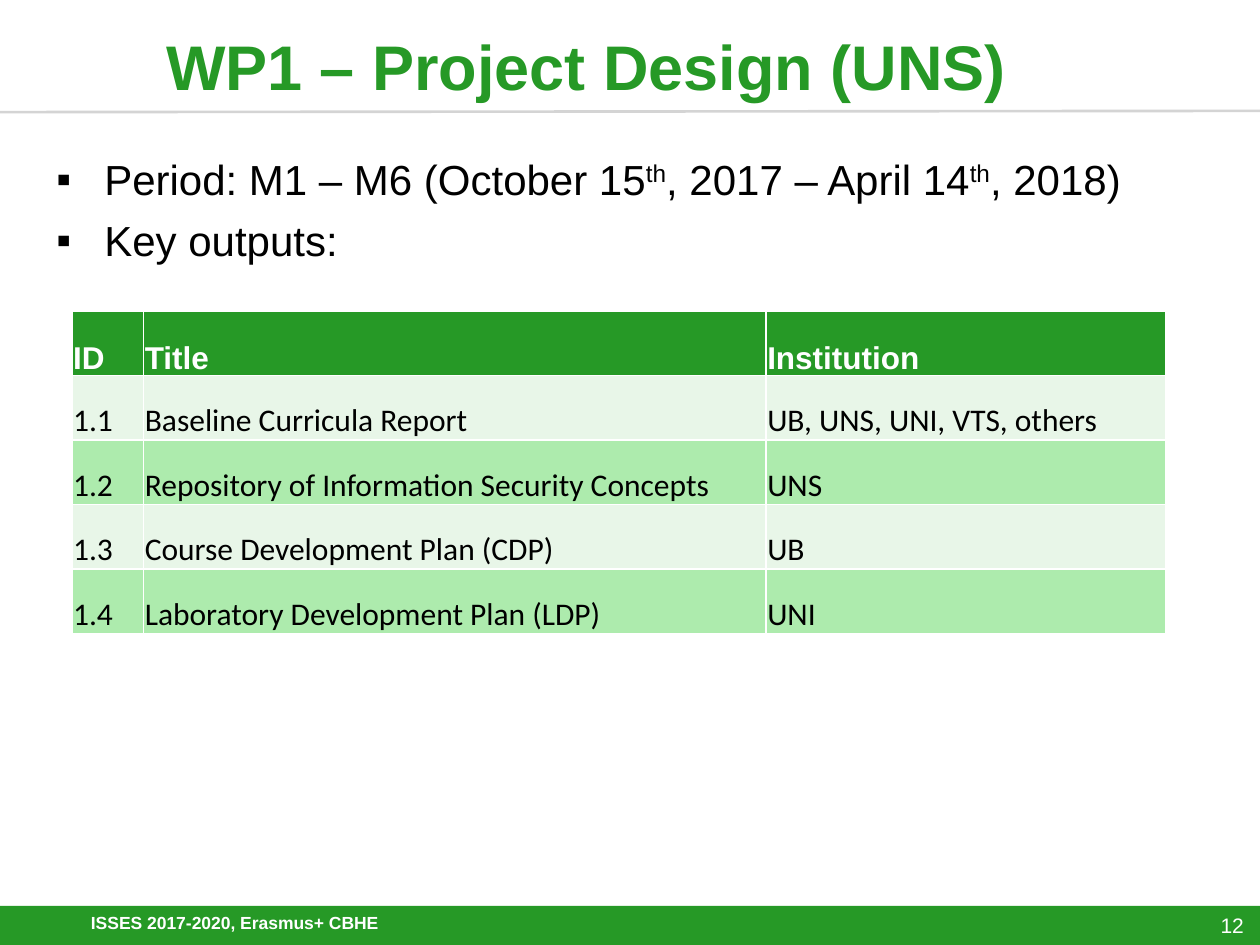
"""Builds the WP1 project design slide."""
from dataclasses import dataclass

from lxml import etree
from pptx import Presentation
from pptx.dml.color import RGBColor
from pptx.enum.shapes import MSO_CONNECTOR, MSO_SHAPE
from pptx.enum.text import MSO_ANCHOR, PP_ALIGN
from pptx.oxml import parse_xml
from pptx.oxml.ns import nsdecls, qn
from pptx.util import Inches, Pt

LEFT, RIGHT = PP_ALIGN.LEFT, PP_ALIGN.RIGHT
TOP, MIDDLE, BOTTOM = MSO_ANCHOR.TOP, MSO_ANCHOR.MIDDLE, MSO_ANCHOR.BOTTOM
RECTANGLE, STRAIGHT = MSO_SHAPE.RECTANGLE, MSO_CONNECTOR.STRAIGHT
COLUMNS, ROWS = 100, 75


@dataclass(frozen=True)
class Theme:
    green: str = "269926"
    pale: str = "E8F6E8"
    light: str = "ADEBAD"
    grey: str = "D4D4D4"
    white: str = "FFFFFF"
    black: str = "000000"
    font: str = "Arial"
    cell_font: str = "Calibri"
    title: int = 36
    body: int = 24
    table: int = 18
    number: int = 12
    footer: int = 10


THEME = Theme()
BULLETS = [
    [("Period: M1 – M6 (October 15", False), ("th", True),
     (", 2017 – April 14", False), ("th", True), (", 2018)", False)],
    [("Key outputs:", False)],
]
OUTPUTS = [
    ("ID", "Title", "Institution"),
    ("1.1", "Baseline Curricula Report", "UB, UNS, UNI, VTS, others"),
    ("1.2", "Repository of Information Security Concepts", "UNS"),
    ("1.3", "Course Development Plan (CDP)", "UB"),
    ("1.4", "Laboratory Development Plan (LDP)", "UNI"),
]
OUTPUT_COLUMNS = (5.7, 49.4, 31.7)


def grid(*units):
    """Turn grid units, a tenth of an inch each, into lengths."""
    return [Inches(unit / 10) for unit in units]


def style(para, size, color, bold=False, name=THEME.font):
    """Set the font of a whole paragraph."""
    font = para.font
    font.name, font.size, font.bold = name, Pt(size), bold
    font.color.rgb = RGBColor.from_string(color)


def add_text_box(page, place, anchor):
    """Add an empty wrapping text box and return its frame."""
    frame = page.shapes.add_textbox(*grid(*place)).text_frame
    frame.word_wrap = True
    frame.vertical_anchor = anchor
    return frame


def add_label(page, place, text, size, color, bold=False, align=LEFT):
    """Add one line of text, centred vertically in its box."""
    para = add_text_box(page, place, MIDDLE).paragraphs[0]
    para.text, para.alignment = text, align
    style(para, size, color, bold)
    return para


def add_bar(page, place, color):
    """Add a plain filled rectangle."""
    bar = page.shapes.add_shape(RECTANGLE, *grid(*place))
    bar.shadow.inherit = False
    bar.fill.solid()
    bar.fill.fore_color.rgb = RGBColor.from_string(color)
    bar.line.fill.background()


def add_rule(page, ends, color, width):
    """Add a straight line without a shadow."""
    rule = page.shapes.add_connector(STRAIGHT, *grid(*ends))
    rule.line.color.rgb = RGBColor.from_string(color)
    rule.line.width = Pt(width)
    etree.SubElement(rule._element.spPr, qn("a:effectLst"))


def set_bullet(para, color):
    """Give a paragraph a square bullet with a hanging indent."""
    props = para._p.get_or_add_pPr()
    indent = Inches(0.38)
    props.set("marL", str(indent))
    props.set("indent", str(-indent))
    for xml in (f'<a:buClr {nsdecls("a")}><a:srgbClr val="{color}"/></a:buClr>',
                f'<a:buFont {nsdecls("a")} typeface="{THEME.font}"/>',
                f'<a:buChar {nsdecls("a")} char="▪"/>'):
        props.append(parse_xml(xml))


def add_bullets(page, place, items):
    """Add bulleted paragraphs whose spans may be superscript."""
    frame = add_text_box(page, place, TOP)
    for index, spans in enumerate(items):
        para = frame.add_paragraph() if index else frame.paragraphs[0]
        para.space_before = Pt(6)
        set_bullet(para, THEME.black)
        style(para, THEME.body, THEME.black)
        for text, raised in spans:
            span = para.add_run()
            span.text = text
            if raised:
                span._r.get_or_add_rPr().set("baseline", "30000")


def set_borders(cell, color, width):
    """Draw all four borders of a cell."""
    props = cell._tc.get_or_add_tcPr()
    for index, side in enumerate(("lnL", "lnR", "lnT", "lnB")):
        props.insert(index, parse_xml(
            f'<a:{side} {nsdecls("a")} w="{Pt(width)}"><a:solidFill>'
            f'<a:srgbClr val="{color}"/></a:solidFill></a:{side}>'))


def fill_cell(cell, text, fill):
    """Set the text position, fill and borders of a cell."""
    cell.text = text
    cell.vertical_anchor = BOTTOM
    cell.margin_left = cell.margin_right = cell.margin_top = Inches(0.01)
    cell.margin_bottom = 0
    cell.fill.solid()
    cell.fill.fore_color.rgb = RGBColor.from_string(fill)
    set_borders(cell, THEME.white, 1)


def add_outputs(page, left, top, height):
    """Add the table of outputs with a header and banded rows."""
    place = grid(left, top, sum(OUTPUT_COLUMNS), height)
    table = page.shapes.add_table(len(OUTPUTS), len(OUTPUT_COLUMNS), *place).table
    table.horz_banding = False
    for column, width in zip(table.columns, grid(*OUTPUT_COLUMNS)):
        column.width = width
    for index, (row, texts) in enumerate(zip(table.rows, OUTPUTS)):
        band = THEME.pale if index % 2 else THEME.light
        for cell, text in zip(row.cells, texts):
            fill_cell(cell, text, band if index else THEME.green)
            para = cell.text_frame.paragraphs[0]
            if index:
                style(para, THEME.table, THEME.black, name=THEME.cell_font)
            else:
                style(para, THEME.table, THEME.white, bold=True)


def main():
    """Build the slide and save the deck."""
    deck = Presentation()
    deck.slide_width, deck.slide_height = grid(COLUMNS, ROWS)
    page = deck.slides.add_slide(deck.slide_layouts[6])
    add_bar(page, (0, 71.9, COLUMNS, 3.1), THEME.green)
    add_rule(page, (0, 8.9, COLUMNS, 8.8), THEME.grey, 1.5)
    add_label(page, (12.2, 0.8, 75.9, 8.7), "WP1 – Project Design (UNS)",
              THEME.title, THEME.green, bold=True)
    add_label(page, (92.5, 71.8, 7.2, 3.2), "12",
              THEME.number, THEME.white, align=RIGHT)
    footer = add_label(page, (1.6, 71.8, 29.4, 3.2), "ISSES 2017-2020, Erasmus+ CBHE",
                       THEME.footer, THEME.white, bold=True, align=RIGHT)
    footer.line_spacing = 0.8
    add_bullets(page, (3.5, 11.7, 94, 58.7), BULLETS)
    add_outputs(page, 5.7, 24.7, 25.6)
    deck.save("out.pptx")


if __name__ == "__main__":
    main()
